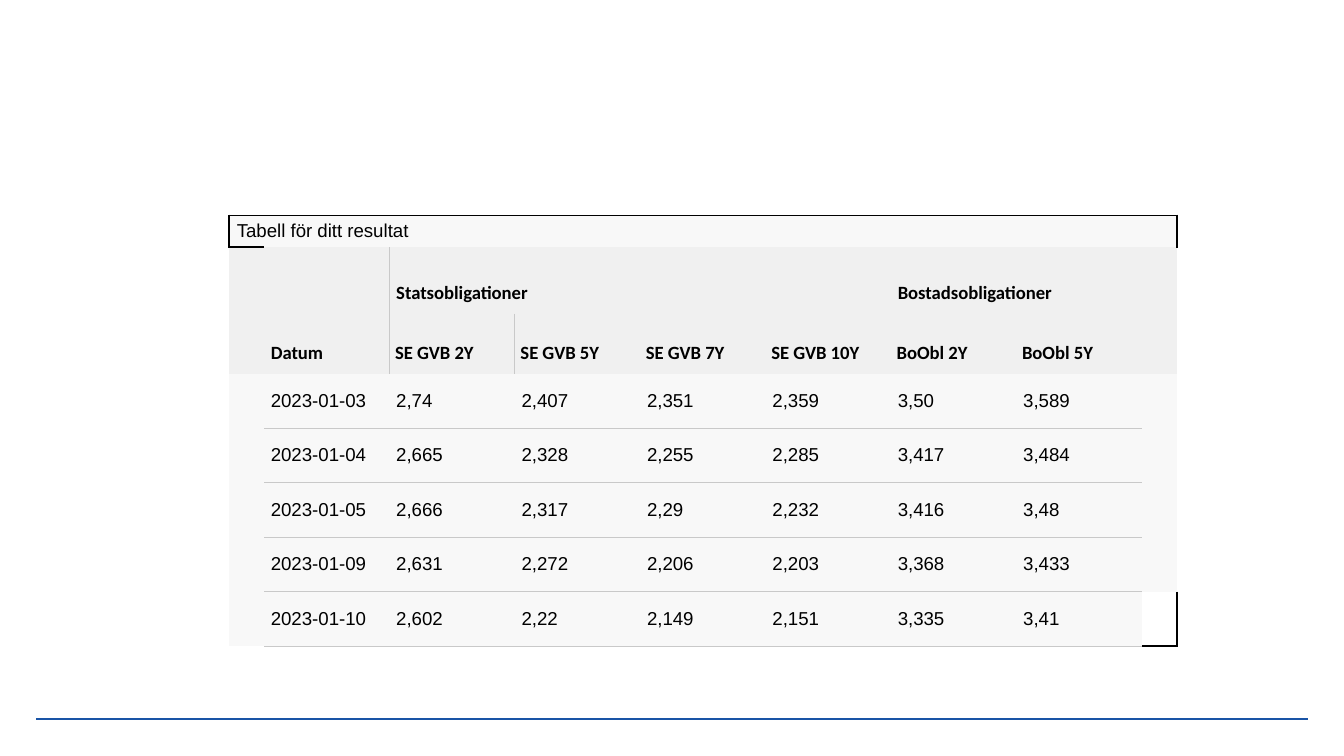
"""Build a slide with a table of Swedish government and housing bond yields."""
from lxml import etree
from pptx import Presentation
from pptx.dml.color import RGBColor
from pptx.enum.shapes import MSO_CONNECTOR
from pptx.enum.text import MSO_ANCHOR
from pptx.oxml.ns import qn
from pptx.util import Pt

STRAIGHT = MSO_CONNECTOR.STRAIGHT
MIDDLE = MSO_ANCHOR.MIDDLE
BOTTOM = MSO_ANCHOR.BOTTOM

BLACK, GREY, BLUE = "000000", "C9C9C9", "1954A6"
HEADER_FILL, BODY_FILL = "F0F0F0", "F8F8F8"
LINE_WIDTHS = {BLACK: 1, GREY: 0.6}

CAPTION = "Tabell för ditt resultat"
GROUPS = {1: "Datum", 2: "Statsobligationer", 6: "Bostadsobligationer"}
BONDS = ["SE GVB 2Y", "SE GVB 5Y", "SE GVB 7Y", "SE GVB 10Y", "BoObl 2Y", "BoObl 5Y"]
YIELDS = [
    ["2023-01-03", "2,74", "2,407", "2,351", "2,359", "3,50", "3,589"],
    ["2023-01-04", "2,665", "2,328", "2,255", "2,285", "3,417", "3,484"],
    ["2023-01-05", "2,666", "2,317", "2,29", "2,232", "3,416", "3,48"],
    ["2023-01-09", "2,631", "2,272", "2,206", "2,203", "3,368", "3,433"],
    ["2023-01-10", "2,602", "2,22", "2,149", "2,151", "3,335", "3,41"],
]
WIDTHS = [18.9] + [67.2] * 7 + [18.9]
HEIGHTS = [17, 35.6, 32.2] + [29.2] * len(YIELDS)
MERGES = [(0, 0, 0, 8), (1, 1, 2, 1), (1, 2, 1, 5), (1, 6, 1, 7)]

RULES_ACROSS = {(0, column): BLACK for column in range(9)}
RULES_ACROSS |= {(row, column): GREY for row in range(4, 9) for column in range(1, 8)}
RULES_ACROSS |= {(1, 0): BLACK, (8, 8): BLACK}
RULES_DOWN = {(0, 0): BLACK, (0, 9): BLACK, (7, 9): BLACK,
              (1, 2): GREY, (2, 2): GREY, (2, 3): GREY}


def color(value):
    return RGBColor.from_string(value)


def margins(left, top, bottom):
    return {"margin_left": Pt(left), "margin_right": Pt(left),
            "margin_top": Pt(top), "margin_bottom": Pt(bottom)}


CAPTION_CELL = {"vertical_anchor": MIDDLE, **margins(4.3, 2, 2)}
GROUP_CELL = {"vertical_anchor": BOTTOM, **margins(3.6, 8.6, 5)}
BOND_CELL = {"vertical_anchor": BOTTOM, **margins(3, 5, 5)}
YIELD_CELL = {"vertical_anchor": MIDDLE, **margins(3.6, 3.6, 3.6)}
CELL_FORMATS = [CAPTION_CELL, GROUP_CELL, BOND_CELL] + [YIELD_CELL] * len(YIELDS)


class Deck:
    header_font = {"name": "Calibri", "size": Pt(10), "bold": True}
    body_font = {"name": "Arial", "size": Pt(10), "bold": False}

    def __init__(self, width, height):
        self.presentation = Presentation()
        self.presentation.slide_width = Pt(width)
        self.presentation.slide_height = Pt(height)
        self.slide = self.presentation.slides.add_slide(self.presentation.slide_layouts[6])

    def apply(self, target, values):
        for name, value in values.items():
            setattr(target, name, value)

    def rule(self, left, right, y, line_color):
        rule = self.slide.shapes.add_connector(STRAIGHT, Pt(left), Pt(y), Pt(right), Pt(y))
        rule.line.color.rgb = color(line_color)
        rule.line.width = Pt(1)
        etree.SubElement(rule.element.spPr, qn("a:effectLst"))

    def border(self, cell, side, line_color):
        properties = cell._tc.get_or_add_tcPr()
        line = etree.SubElement(properties, qn(f"a:ln{side}"))
        if line_color is None:
            etree.SubElement(line, qn("a:noFill"))
            return
        line.set("w", str(int(Pt(LINE_WIDTHS[line_color]))))
        fill = etree.SubElement(line, qn("a:solidFill"))
        etree.SubElement(fill, qn("a:srgbClr")).set("val", line_color)

    def cell(self, cell, row, column, text):
        bottom, right = row + cell.span_height, column + cell.span_width
        self.border(cell, "L", RULES_DOWN.get((row, column)))
        self.border(cell, "R", RULES_DOWN.get((row, right)))
        self.border(cell, "T", RULES_ACROSS.get((row, column)))
        self.border(cell, "B", RULES_ACROSS.get((bottom, column)))
        is_header = row in (1, 2)
        if (row, column) == (7, 8):
            cell.fill.background()
        else:
            cell.fill.solid()
            cell.fill.fore_color.rgb = color(HEADER_FILL if is_header else BODY_FILL)
        self.apply(cell, CELL_FORMATS[row])
        paragraph = cell.text_frame.paragraphs[0]
        font = paragraph.add_run().font if text else paragraph.font
        if text:
            paragraph.runs[0].text = text
        self.apply(font, self.header_font if is_header else self.body_font)
        font.color.rgb = color(BLACK)

    def table(self, left, top, texts):
        frame = self.slide.shapes.add_table(len(HEIGHTS), len(WIDTHS), Pt(left), Pt(top),
                                            Pt(sum(WIDTHS)), Pt(sum(HEIGHTS)))
        table = frame.table
        self.apply(table, {"first_row": False, "horz_banding": False})
        for column, width in zip(table.columns, WIDTHS):
            column.width = Pt(width)
        for row, height in zip(table.rows, HEIGHTS):
            row.height = Pt(height)
        for first_row, first_column, last_row, last_column in MERGES:
            table.cell(first_row, first_column).merge(table.cell(last_row, last_column))
        for row in range(len(HEIGHTS)):
            for column in range(len(WIDTHS)):
                self.cell(table.cell(row, column), row, column, texts.get((row, column)))


def main():
    texts = {(0, 0): CAPTION}
    texts |= {(1, column): group for column, group in GROUPS.items()}
    texts |= {(2, column): bond for column, bond in enumerate(BONDS, 2)}
    for row, values in enumerate(YIELDS, 3):
        texts |= {(row, column): value for column, value in enumerate(values, 1)}

    deck = Deck(720, 405)
    deck.rule(19.4, 700.6, 385.2, BLUE)
    deck.table(122.6, 115.4, texts)
    deck.presentation.save("out.pptx")


if __name__ == "__main__":
    main()
